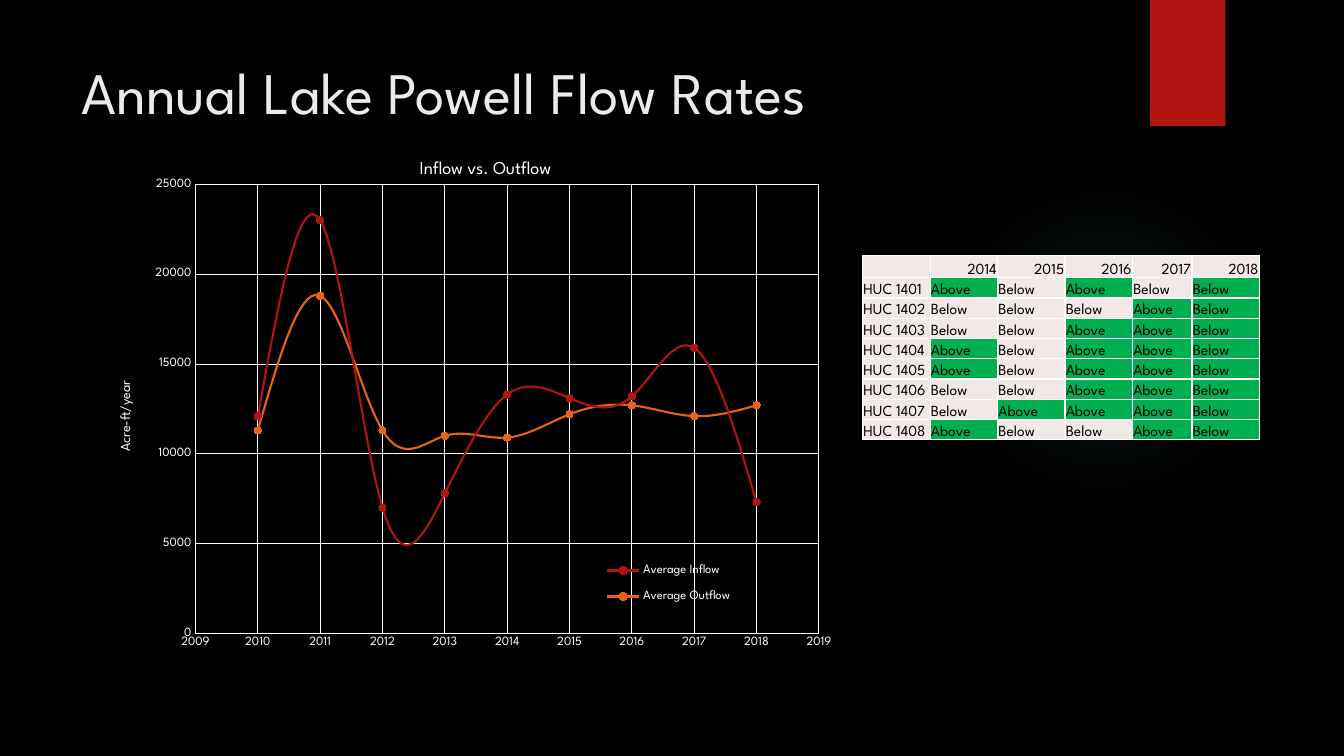
from dataclasses import dataclass
from typing import Any

from pptx import Presentation
from pptx.chart.data import XyChartData
from pptx.dml.color import RGBColor
from pptx.enum.chart import XL_CHART_TYPE, XL_LEGEND_POSITION, XL_MARKER_STYLE, XL_TICK_MARK
from pptx.enum.shapes import MSO_SHAPE
from pptx.enum.text import MSO_ANCHOR, PP_ALIGN
from pptx.oxml import parse_xml
from pptx.oxml.ns import nsdecls, qn
from pptx.util import Cm, Pt

TYPEFACE = "League Spartan"
WHITE, BLACK, RED, ORANGE = "FFFFFF", "000000", "B01513", "EA6312"
TEAL, PALE, GREEN = "50B9C1", "F2E8E7", "00B050"


@dataclass(frozen=True)
class Flow:
    name: str
    color: str
    rates: tuple[int, ...]


@dataclass(frozen=True)
class Basin:
    name: str
    levels: str


FLOWS = (
    Flow("Average Inflow", RED, (7300, 15900, 13200, 13100, 13300, 7800, 7000, 23000, 12100)),
    Flow("Average Outflow", ORANGE, (12700, 12100, 12700, 12200, 10900, 11000, 11300, 18800, 11300)),
)
BASINS = (
    Basin("HUC 1401", "ABABB"),
    Basin("HUC 1402", "BBBAB"),
    Basin("HUC 1403", "BBAAB"),
    Basin("HUC 1404", "ABAAB"),
    Basin("HUC 1405", "ABAAB"),
    Basin("HUC 1406", "BBAAB"),
    Basin("HUC 1407", "BAAAB"),
    Basin("HUC 1408", "ABBAB"),
)
LEVELS = {"A": "Above", "B": "Below"}
YEARS = ("2014", "2015", "2016", "2017", "2018")


def assign(target: Any, formats: dict[str, Any]) -> None:
    for attribute, value in formats.items():
        setattr(target, attribute, value)


def paint(fill: Any, color: str) -> None:
    fill.solid()
    fill.fore_color.rgb = RGBColor.from_string(color)


def style_font(font: Any, size: float, color: str) -> None:
    assign(font, {"name": TYPEFACE, "size": Pt(size), "bold": False})
    paint(font.fill, color)


def stroke(line: Any, color: str, width: float) -> None:
    paint(line.fill, color)
    line.width = Pt(width)


def place(part: Any, index: int, target: str, **fractions: float) -> None:
    for previous in part.findall(qn("c:layout")):
        part.remove(previous)
    modes = "".join(f'<c:{axis}Mode val="edge"/>' for axis in "xy")
    values = "".join(f'<c:{key} val="{value}"/>' for key, value in fractions.items())
    part.insert(index, parse_xml(
        f'<c:layout {nsdecls("c")}><c:manualLayout>{target}{modes}{values}</c:manualLayout></c:layout>'))


def write_heading(heading: Any, wording: str, size: float, x: float, y: float) -> None:
    heading.text_frame.text = wording
    style_font(heading.text_frame.paragraphs[0].runs[0].font, size, WHITE)
    place(heading._element, 1, "", x=x, y=y)


def draw_decor(slide: Any) -> None:
    glow = slide.shapes.add_shape(MSO_SHAPE.OVAL, Cm(23.9), Cm(4.65), Cm(7.82), Cm(7.82))
    ribbon = slide.shapes.add_shape(MSO_SHAPE.RECTANGLE, Cm(28.98), Cm(0), Cm(1.9), Cm(3.18))
    for decor in (glow, ribbon):
        decor.shadow.inherit = False
        decor.line.fill.background()
    paint(ribbon.fill, RED)
    glow.fill.background()
    stops = "".join(
        f'<a:gs pos="{position * 1000}"><a:srgbClr val="{TEAL}">'
        f'<a:alpha val="{alpha * 1000}"/></a:srgbClr></a:gs>'
        for position, alpha in ((0, 7), (36, 6), (69, 0), (100, 0)))
    properties = glow._element.spPr
    properties.replace(properties.find(qn("a:noFill")), parse_xml(
        f'<a:gradFill {nsdecls("a")}><a:gsLst>{stops}</a:gsLst><a:path path="circle">'
        '<a:fillToRect l="50000" t="50000" r="50000" b="50000"/></a:path></a:gradFill>'))


def write_title(slide: Any) -> None:
    title = slide.shapes.title
    assign(title, {"left": Cm(1.8), "top": Cm(1.27), "width": Cm(26.14), "height": Cm(3.89)})
    title.text_frame.text = "Annual Lake Powell Flow Rates"
    title.text_frame.vertical_anchor = MSO_ANCHOR.TOP
    paragraph = title.text_frame.paragraphs[0]
    paragraph.alignment = PP_ALIGN.LEFT
    style_font(paragraph.runs[0].font, 42, "EBEBEB")


def draw_flow_chart(slide: Any) -> None:
    data = XyChartData()
    for flow in FLOWS:
        points = data.add_series(flow.name)
        for year, rate in zip(range(2018, 2009, -1), flow.rates):
            points.add_data_point(year, rate)
    chart = slide.shapes.add_chart(
        XL_CHART_TYPE.XY_SCATTER_SMOOTH, Cm(2.34), Cm(3.53), Cm(19.89), Cm(13.97), data).chart
    style_font(chart.font, 10, WHITE)
    plot = chart.plots[0]
    plot.vary_by_categories = False
    for series, flow in zip(plot.series, FLOWS):
        stroke(series.format.line, flow.color, 1.5)
        assign(series.marker, {"style": XL_MARKER_STYLE.CIRCLE, "size": 5})
        paint(series.marker.format.fill, flow.color)
        stroke(series.marker.format.line, flow.color, 0.75)
        series._element.find(qn("c:smooth")).set("val", "1")

    scales = ((chart.category_axis, 2009, 2019, 1), (chart.value_axis, 0, 25000, 5000))
    for axis, lowest, highest, step in scales:
        assign(axis, {
            "minimum_scale": lowest, "maximum_scale": highest, "major_unit": step,
            "has_major_gridlines": True,
            "major_tick_mark": XL_TICK_MARK.NONE, "minor_tick_mark": XL_TICK_MARK.NONE})
        style_font(axis.tick_labels.font, 9, WHITE)
        for line in (axis.format.line, axis.major_gridlines.format.line):
            stroke(line, WHITE, 0.75)

    write_heading(chart.chart_title, "Inflow vs. Outflow", 13, 0.41, 0.03)
    rate_title = chart.value_axis.axis_title
    write_heading(rate_title, "Acre-ft/year", 10, 0.03, 0.43)
    rate_title._element.find(".//" + qn("a:bodyPr")).set("rot", "-5400000")

    chart.has_legend = True
    assign(chart.legend, {"position": XL_LEGEND_POSITION.RIGHT, "include_in_layout": False})
    style_font(chart.legend.font, 9, WHITE)
    place(chart.legend._element, 1, "", x=0.64, y=0.74, w=0.18, h=0.12)
    plot_area = chart._chartSpace.chart.plotArea
    place(plot_area, 0, '<c:layoutTarget val="inner"/>', x=0.13, y=0.08, w=0.79, h=0.81)


def write_cell(cell: Any, wording: str, color: str, alignment: Any) -> None:
    assign(cell, {
        "margin_left": Cm(0.02), "margin_right": Cm(0.02), "margin_top": Cm(0.02),
        "margin_bottom": Cm(0), "vertical_anchor": MSO_ANCHOR.BOTTOM})
    properties = cell._tc.get_or_add_tcPr()
    for side in "LRTB":
        properties.append(parse_xml(
            f'<a:ln{side} {nsdecls("a")} w="12700"><a:solidFill>'
            f'<a:srgbClr val="{WHITE}"/></a:solidFill></a:ln{side}>'))
    paint(cell.fill, color)
    paragraph = cell.text_frame.paragraphs[0]
    paragraph.alignment = alignment
    if wording:
        paragraph.text = wording
        style_font(paragraph.runs[0].font, 11, BLACK)
    else:
        paragraph._p.append(parse_xml(
            f'<a:endParaRPr {nsdecls("a")} sz="1100"><a:latin typeface="{TYPEFACE}"/></a:endParaRPr>'))


def draw_basin_table(slide: Any) -> None:
    widths = (1.7, 1.7, 1.7, 1.7, 1.5, 1.7)
    heights = (0.57,) + (0.51,) * len(BASINS)
    table = slide.shapes.add_table(
        len(heights), len(widths), Cm(21.74), Cm(6.43), Cm(sum(widths)), Cm(sum(heights))).table
    assign(table, {"first_row": False, "horz_banding": False})
    for column, width in zip(table.columns, widths):
        column.width = Cm(width)
    for row, height in zip(table.rows, heights):
        row.height = Cm(height)
    for index, year in enumerate(("",) + YEARS):
        write_cell(table.cell(0, index), year, PALE, PP_ALIGN.RIGHT)
    for row_index, basin in enumerate(BASINS, 1):
        write_cell(table.cell(row_index, 0), basin.name, PALE, PP_ALIGN.LEFT)
        for index, (year, level) in enumerate(zip(YEARS, basin.levels), 1):
            color = GREEN if level == "A" or year == "2018" else PALE
            write_cell(table.cell(row_index, index), LEVELS[level], color, PP_ALIGN.LEFT)


def main() -> None:
    presentation = Presentation()
    assign(presentation, {"slide_width": Cm(33.87), "slide_height": Cm(19.05)})
    slide = presentation.slides.add_slide(presentation.slide_layouts[5])
    paint(slide.background.fill, BLACK)
    draw_decor(slide)
    write_title(slide)
    draw_flow_chart(slide)
    draw_basin_table(slide)
    presentation.save("out.pptx")


if __name__ == "__main__":
    main()
